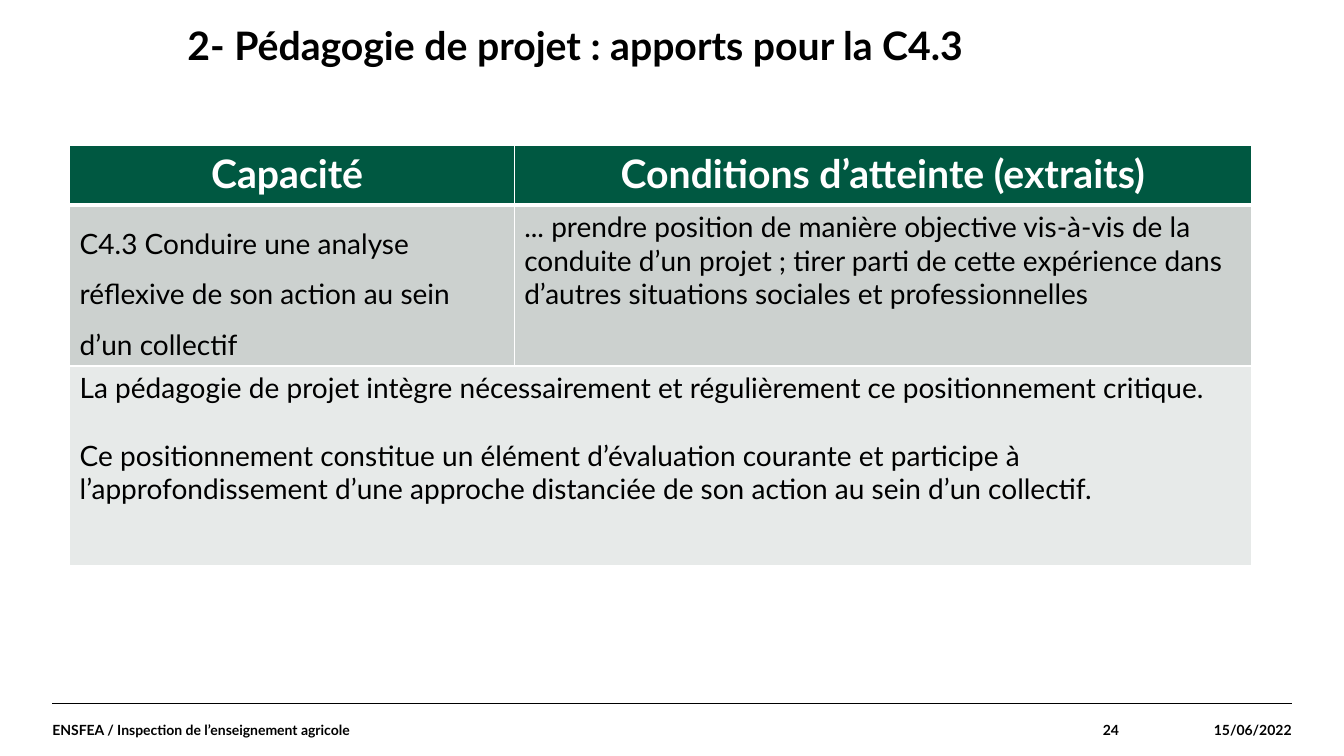
from lxml import etree
from pptx import Presentation
from pptx import util as u
from pptx.dml.color import RGBColor
from pptx.enum import shapes, text
from pptx.oxml.ns import qn

WIDE, HIGH = u.Inches(13.33), u.Inches(7.5)
FONT = "Lato"
COLORS = {"ink": "000000", "paper": "FFFFFF", "green": "005841",
          "mid": "CCD1CF", "pale": "E7EAE9"}
LEFT, CENTER, RIGHT = (text.PP_ALIGN.LEFT, text.PP_ALIGN.CENTER,
                       text.PP_ALIGN.RIGHT)
COLS = (33.08, 54.84)
ROWS = (7.87, 21.33, 26.4)
BASE = 93.07
FOOT = (
    ("ENSFEA / Inspection de l’enseignement agricole", 3.9, 64.59, LEFT),
    ("24", 68.49, 14.78, RIGHT),
    ("15/06/2022", 83.27, 12.83, RIGHT),
)
HEADS = ("Capacité ", "Conditions d’atteinte (extraits)")
SKILL = "C4.3 Conduire une analyse réflexive de son action au sein d’un collectif"
TERMS = ("... prendre position de manière objective vis-à-vis de la conduite "
         "d’un projet ; tirer parti de cette expérience dans d’autres "
         "situations sociales et professionnelles")
NOTES = (
    "La pédagogie de projet intègre nécessairement et régulièrement ce "
    "positionnement critique.",
    "Ce positionnement constitue un élément d’évaluation courante et participe "
    "à l’approfondissement d’une approche distanciée de son action au sein "
    "d’un collectif.",
)


def across(share):
    return round(WIDE * share / 100)


def down(share):
    return round(HIGH * share / 100)


def color(name):
    return RGBColor.from_string(COLORS[name])


def write(frame, lines, size, ink="ink", bold=False, align=LEFT, lead=1, gap=0):
    for i, line in enumerate(lines):
        para = frame.add_paragraph() if i else frame.paragraphs[0]
        para.text = line
        para.alignment = align
        para.line_spacing = lead
        if i:
            para.space_before = u.Pt(gap)
        font = para.font
        font.name, font.size, font.bold = FONT, u.Pt(size), bold
        font.color.rgb = color(ink)


def label(slide, line, x, y, w, h, size, anchor, align=LEFT, lead=1):
    box = slide.shapes.add_textbox(across(x), down(y), across(w), down(h))
    frame = box.text_frame
    frame.word_wrap = True
    frame.vertical_anchor = anchor
    frame.margin_left = frame.margin_right = 0
    frame.margin_top = frame.margin_bottom = 0
    write(frame, [line], size, bold=True, align=align, lead=lead)


def rule(slide, x, y, end):
    line = slide.shapes.add_connector(shapes.MSO_CONNECTOR.STRAIGHT, across(x),
                                      down(y), across(end), down(y))
    line.line.color.rgb = color("ink")
    line.line.width = u.Pt(0.8)
    etree.SubElement(line._element.spPr, qn("a:effectLst"))


def border(cell, base):
    props = cell._tc.get_or_add_tcPr()
    for side, width in (("L", 1), ("R", 1), ("T", 1), ("B", base)):
        edge = etree.SubElement(props, qn("a:ln" + side), w=str(u.Pt(width)))
        fill = etree.SubElement(edge, qn("a:solidFill"))
        etree.SubElement(fill, qn("a:srgbClr"), val=COLORS["paper"])


def paint(cell, fill, base=1):
    border(cell, base)
    cell.fill.solid()
    cell.fill.fore_color.rgb = color(fill)


def grid(slide, x, y):
    table = slide.shapes.add_table(len(ROWS), len(COLS), across(x), down(y),
                                   across(sum(COLS)), down(sum(ROWS))).table
    for col, share in zip(table.columns, COLS):
        col.width = across(share)
    for row, share in zip(table.rows, ROWS):
        row.height = down(share)
    for row, (fill, base) in enumerate((("green", 3), ("mid", 1), ("pale", 1))):
        for col in range(len(COLS)):
            paint(table.cell(row, col), fill, base)
    table.cell(2, 0).merge(table.cell(2, 1))
    for col, head in enumerate(HEADS):
        write(table.cell(0, col).text_frame, [head], 28, "paper", True, CENTER)
    write(table.cell(1, 0).text_frame, [SKILL], 20, lead=1.5)
    write(table.cell(1, 1).text_frame, [TERMS], 20)
    write(table.cell(2, 0).text_frame, NOTES, 20, gap=24)


def main():
    deck = Presentation()
    deck.slide_width, deck.slide_height = WIDE, HIGH
    slide = deck.slides.add_slide(deck.slide_layouts[6])
    rule(slide, 3.9, BASE, 96.1)
    label(slide, "2- Pédagogie de projet : apports pour la C4.3", 13.95, 3.47,
          81.17, 14, 28, text.MSO_ANCHOR.TOP, lead=0.9)
    for line, x, w, align in FOOT:
        label(slide, line, x, BASE, w, 100 - BASE, 10, text.MSO_ANCHOR.MIDDLE,
              align)
    grid(slide, 5.18, 19.2)
    deck.save("out.pptx")


if __name__ == "__main__":
    main()
